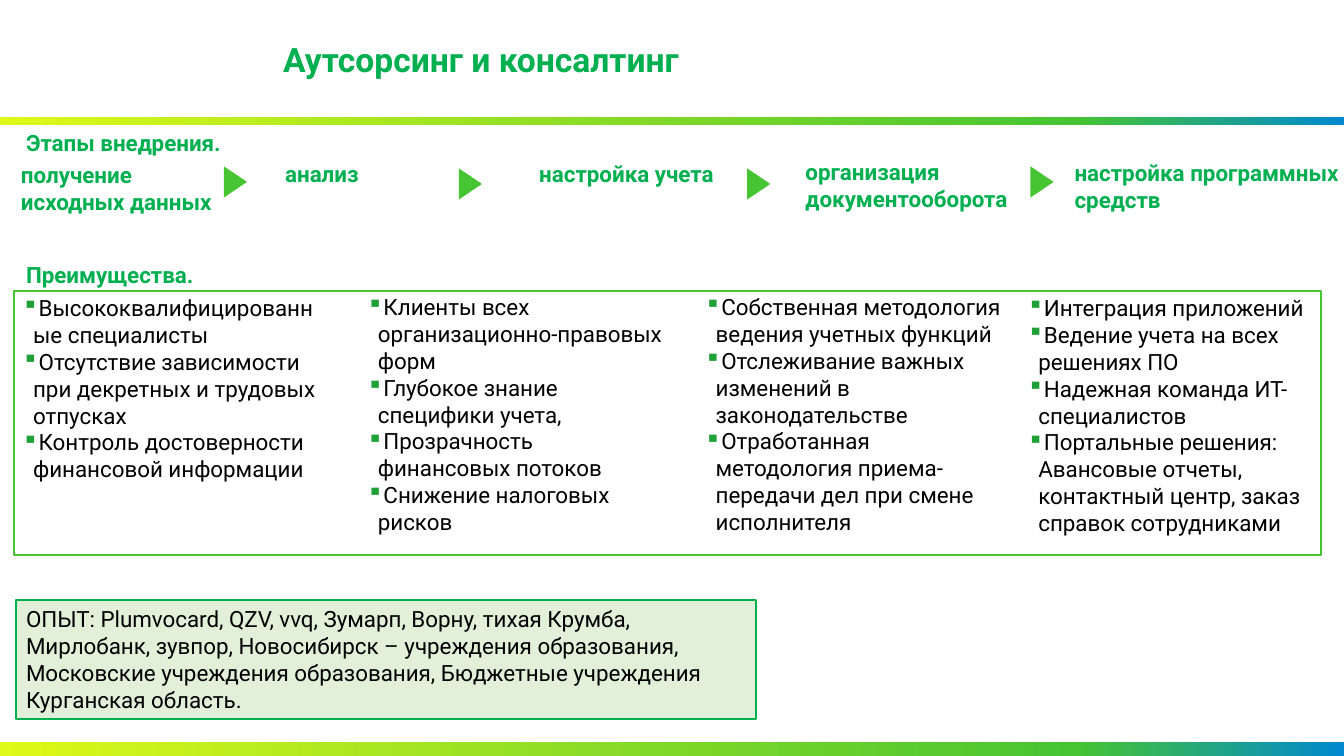
import copy

import pptx
import pptx.dml.color
import pptx.enum.shapes
import pptx.enum.text
import pptx.oxml
import pptx.oxml.ns
import pptx.util

Inches = pptx.util.Inches
RGBColor = pptx.dml.color.RGBColor
Shape = pptx.enum.shapes.MSO_SHAPE
Anchor = pptx.enum.text.MSO_ANCHOR
qn = pptx.oxml.ns.qn

GREEN = RGBColor(0x00, 0xB0, 0x50)
LIME = RGBColor(0x46, 0xC4, 0x32)
PALE_GREEN = RGBColor(0xE2, 0xF0, 0xD9)
BLACK = RGBColor(0, 0, 0)
BULLET_COLOR = "20A138"
BAND_STOPS = [
    (0, RGBColor(0xDE, 0xF9, 0x18)),
    (0.8, LIME),
    (1, RGBColor(0x01, 0x89, 0xCF)),
]
FONT = "Roboto"
SLIDE_WIDTH, SLIDE_HEIGHT = 13.33, 7.5

TITLE = "Аутсорсинг и консалтинг"
# text, (left, top, width, height)
HEADINGS = [
    ("Этапы внедрения.", (0.16, 1.23, 10.03, 0.37)),
    ("Преимущества.", (0.16, 2.54, 8.78, 0.37)),
]
STAGES = [
    ("получение\vисходных данных", (0.11, 1.55, 2.29, 0.64)),
    ("анализ", (2.73, 1.54, 1.17, 0.37)),
    ("настройка учета", (5.25, 1.54, 2.04, 0.37)),
    ("организация документооборота", (7.89, 1.52, 2.55, 0.64)),
    ("настройка программных средств", (10.56, 1.53, 3, 0.64)),
]
ARROWS = [(2.18, 1.69), (4.51, 1.71), (7.37, 1.71), (10.18, 1.69)]
ARROW_SIZE = (0.31, 0.23)

ADVANTAGES_FRAME = (0.14, 2.89, 12.96, 2.62)
ADVANTAGES = [
    ((-0.08, 2.87, 3.42, 2.52), [
        "Высококвалифицированные специалисты",
        "Отсутствие зависимости при декретных и трудовых отпусках",
        "Контроль достоверности финансовой информации",
    ]),
    ((3.34, 2.86, 3.36, 2.52), [
        "Клиенты всех организационно-правовых форм",
        "Глубокое знание специфики учета,",
        "Прозрачность финансовых потоков",
        "Снижение налоговых рисков",
    ]),
    ((6.69, 2.86, 3.4, 2.79), [
        "Собственная методология ведения учетных функций",
        "Отслеживание важных изменений в законодательстве",
        "Отработанная методология приема-передачи дел при смене исполнителя",
    ]),
    ((9.89, 2.87, 3.22, 2.52), [
        "Интеграция приложений",
        "Ведение учета на всех решениях ПО",
        "Надежная команда ИТ-специалистов",
        "Портальные решения: Авансовые отчеты, контактный центр, "
        "заказ справок сотрудниками",
    ]),
]
EXPERIENCE = (
    "ОПЫТ: Plumvocard, QZV, vvq, Зумарп, Ворну, тихая Крумба, "
    "Мирлобанк, зувпор, Новосибирск – учреждения образования, "
    "Московские учреждения образования, Бюджетные учреждения "
    "Курганская область."
)
EXPERIENCE_BOX = (0.16, 5.95, 7.34, 1.18)


def add_bullet(paragraph):
    properties = paragraph._p.get_or_add_pPr()
    properties.set("marL", str(Inches(0.31)))
    properties.set("indent", str(Inches(-0.11)))
    color = pptx.oxml.parse_xml(
        '<a:buClr xmlns:a="http://schemas.openxmlformats.org/drawingml/2006/main">'
        f'<a:srgbClr val="{BULLET_COLOR}"/></a:buClr>')
    properties.append(color)
    mark = copy.deepcopy(color)
    mark.tag = qn("a:buChar")
    mark.remove(mark[0])
    mark.set("char", "▪")
    properties.append(mark)


def write(shape, lines, size=16, color=BLACK, bold=False, bullets=False,
          anchor=Anchor.TOP):
    frame = shape.text_frame
    frame.word_wrap = True
    frame.vertical_anchor = anchor
    for index, line in enumerate(lines):
        paragraph = frame.add_paragraph() if index else frame.paragraphs[0]
        paragraph.text = line
        paragraph.alignment = pptx.enum.text.PP_ALIGN.LEFT
        if bullets:
            add_bullet(paragraph)
        for run in paragraph.runs:
            run.font.name = FONT
            run.font.size = pptx.util.Pt(size)
            run.font.bold = bold
            run.font.color.rgb = color


def add_text(slide, box, lines, **text_format):
    write(slide.shapes.add_textbox(*map(Inches, box)), lines, **text_format)


def add_shape(slide, kind, box, fill=None, line=None):
    shape = slide.shapes.add_shape(kind, *map(Inches, box))
    shape.shadow.inherit = False
    if fill is None:
        shape.fill.background()
    else:
        shape.fill.solid()
        shape.fill.fore_color.rgb = fill
    if line is None:
        shape.line.fill.background()
    else:
        shape.line.color.rgb = line
        shape.line.width = pptx.util.Pt(1.5)
    return shape


def add_band(slide, kind, top, height):
    """Add a full-width strip with the three-colour gradient."""
    band = add_shape(slide, kind, (0, top, SLIDE_WIDTH, height))
    band.fill.gradient()
    band.fill.gradient_angle = 0
    stop_list = next(band._element.spPr.iter(qn("a:gsLst")))
    stop_list.append(copy.deepcopy(stop_list[-1]))
    for stop, (position, color) in zip(band.fill.gradient_stops, BAND_STOPS):
        stop.position = position
        stop.color.rgb = color


def main():
    presentation = pptx.Presentation()
    presentation.slide_width = Inches(SLIDE_WIDTH)
    presentation.slide_height = Inches(SLIDE_HEIGHT)
    slide = presentation.slides.add_slide(presentation.slide_layouts[6])

    add_band(slide, Shape.ROUNDED_RECTANGLE, 1.16, 0.08)
    add_band(slide, Shape.RECTANGLE, 7.36, 0.14)
    add_text(slide, (2.71, 0.34, 7.02, 0.5), [TITLE],
             size=24, color=GREEN, bold=True)
    for text, box in STAGES + HEADINGS:
        add_text(slide, box, [text], color=GREEN, bold=True)
    for position in ARROWS:
        arrow = add_shape(slide, Shape.ISOSCELES_TRIANGLE,
                          position + ARROW_SIZE, fill=LIME)
        arrow.rotation = 90

    for box, points in ADVANTAGES:
        add_text(slide, box, points, bullets=True)
    add_shape(slide, Shape.RECTANGLE, ADVANTAGES_FRAME, line=LIME)
    experience = add_shape(slide, Shape.RECTANGLE, EXPERIENCE_BOX,
                           fill=PALE_GREEN, line=GREEN)
    write(experience, [EXPERIENCE], anchor=Anchor.MIDDLE)

    presentation.save("out.pptx")


if __name__ == "__main__":
    main()
